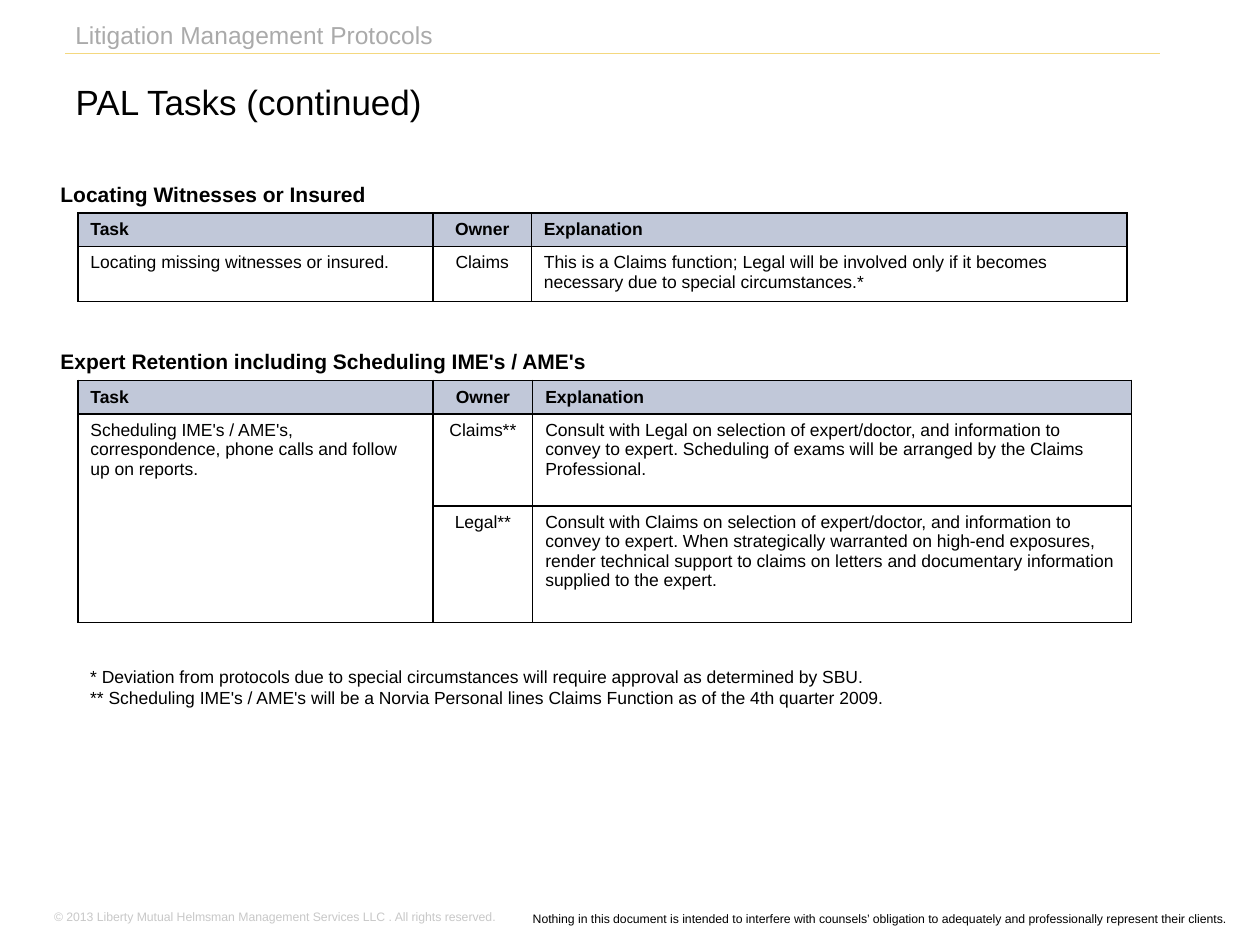
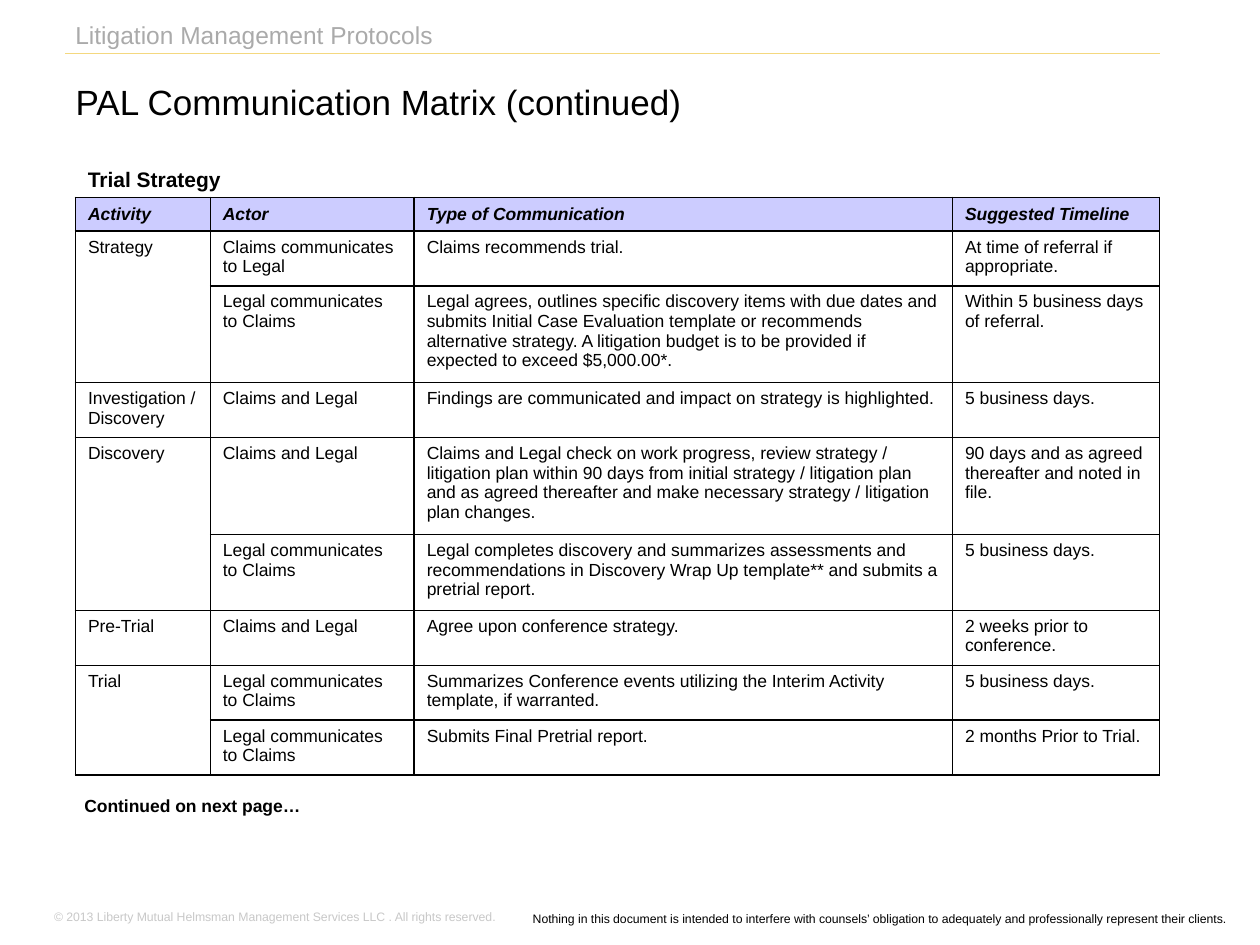
from lxml import etree
from pptx import Presentation
from pptx.dml.color import RGBColor
from pptx.enum import shapes, text
from pptx.oxml import ns
from pptx.util import Cm, Pt

BLACK = RGBColor(0x00, 0x00, 0x00)
HEADER_GRAY = RGBColor(0xAA, 0xAA, 0xAA)
COPYRIGHT_GRAY = RGBColor(0xC8, 0xC8, 0xC8)
GOLD = RGBColor(0xF4, 0xD8, 0x7F)
TASK_BLUE = RGBColor(0xC1, 0xC8, 0xD9)
MATRIX_BLUE = RGBColor(0xCC, 0xCC, 0xFF)
FONT = "Arial"

TITLE_BOX = (1.27, 1.4, 22.86, 1.19)
RULE = (1.32, 1.08, 23.39, 1.08)
SHARED_TEXTS = [
    ("Litigation Management Protocols", (1.27, 0.04, 18.21, 1.3),
     dict(size=14, color=HEADER_GRAY, anchor=text.MSO_ANCHOR.MIDDLE)),
    ("Nothing in this document is intended to interfere with counsels’ obligation to "
     "adequately and professionally represent their clients.", (7.62, 18.24, 17.35, 0.56),
     dict(size=7, align=text.PP_ALIGN.RIGHT)),
    ("© 2013 Liberty Mutual Helmsman Management Services LLC . All rights reserved.",
     (0.84, 18.21, 17.63, 0.56), dict(size=7, color=COPYRIGHT_GRAY)),
]

HEADING = dict(size=12, bold=True, wrap=False, anchor=text.MSO_ANCHOR.MIDDLE)
NOTES = dict(size=10, wrap=False, anchor=text.MSO_ANCHOR.MIDDLE)
CONTINUED = dict(size=10, bold=True)

TASK_STYLE = dict(header_fill=TASK_BLUE, centered=(1,), thin=(1, 2))
MATRIX_STYLE = dict(header_fill=MATRIX_BLUE, italic=True, thin=(1,))
TASK_HEADER = ("Task", "Owner", "Explanation")

SLIDES = [
    dict(
        title="PAL Tasks (continued)",
        texts=[
            ("Locating Witnesses or Insured", (0.97, 3.53, 6.81, 0.76), HEADING),
            ("Expert Retention including Scheduling IME's / AME's",
             (0.97, 6.91, 11.28, 0.76), HEADING),
            ("* Deviation from protocols due to special circumstances will require approval "
             "as determined by SBU.\n"
             "** Scheduling IME's / AME's will be a Norvia Personal lines Claims Function "
             "as of the 4th quarter 2009.", (1.57, 13.31, 16.64, 1.09), NOTES),
        ],
        tables=[
            dict(at=(1.57, 4.29), cols=(7.16, 1.98, 12.01), heights=(0.67, 1.11), rows=[
                TASK_HEADER,
                ("Locating missing witnesses or insured.", "Claims",
                 "This is a Claims function; Legal will be involved only if it becomes "
                 "necessary due to special circumstances.*"),
            ], style=TASK_STYLE),
            dict(at=(1.57, 7.67), cols=(7.16, 2.01, 12.07), heights=(0.67, 1.85, 2.35), rows=[
                TASK_HEADER,
                ("Scheduling IME's / AME's, correspondence, phone calls and follow up on "
                 "reports.", "Claims**",
                 "Consult with Legal on selection of expert/doctor, and information to convey "
                 "to expert. Scheduling of exams will be arranged by the Claims Professional."),
                (None, "Legal**",
                 "Consult with Claims on selection of expert/doctor, and information to convey "
                 "to expert. When strategically warranted on high-end exposures, render "
                 "technical support to claims on letters and documentary information supplied "
                 "to the expert."),
            ], style=TASK_STYLE),
        ],
    ),
    dict(
        title="PAL Communication Matrix (continued)",
        texts=[
            ("Trial Strategy", (1.52, 3.23, 3.23, 0.76), HEADING),
            ("Continued on next page…", (1.45, 15.9, 7.39, 0.69), CONTINUED),
        ],
        tables=[
            dict(at=(1.52, 3.98), cols=(2.72, 4.11, 10.85, 4.17),
                 heights=(0.68, 1.1, 1.95, 1.11, 1.95, 1.52, 1.11, 1.1, 1.11), rows=[
                ("Activity", "Actor", "Type of Communication", "Suggested Timeline"),
                ("Strategy", "Claims communicates to Legal", "Claims recommends trial.",
                 "At time of referral if appropriate."),
                (None, "Legal communicates to Claims",
                 "Legal agrees, outlines specific discovery items with due dates and submits "
                 "Initial Case Evaluation template or recommends alternative strategy. A "
                 "litigation budget is to be provided if expected to exceed $5,000.00*.",
                 "Within 5 business days of referral."),
                ("Investigation / Discovery", "Claims and Legal",
                 "Findings are communicated and impact on strategy is highlighted.",
                 "5 business days."),
                ("Discovery", "Claims and Legal",
                 "Claims and Legal check on work progress, review strategy / litigation plan "
                 "within 90 days from initial strategy / litigation plan and as agreed "
                 "thereafter and make necessary strategy / litigation plan changes.",
                 "90 days and as agreed thereafter and noted in file."),
                (None, "Legal communicates to Claims",
                 "Legal completes discovery and summarizes assessments and recommendations in "
                 "Discovery Wrap Up template** and submits a pretrial report.",
                 "5 business days."),
                ("Pre-Trial", "Claims and Legal", "Agree upon conference strategy.",
                 "2 weeks prior to conference."),
                ("Trial", "Legal communicates to Claims",
                 "Summarizes Conference events utilizing the Interim Activity template, if "
                 "warranted.", "5 business days."),
                (None, "Legal communicates to Claims", "Submits Final Pretrial report.",
                 "2 months Prior to Trial."),
            ], style=MATRIX_STYLE),
        ],
    ),
]


def write(tf, words, size=10, color=BLACK, bold=False, italic=False,
          align=text.PP_ALIGN.LEFT, anchor=text.MSO_ANCHOR.TOP, wrap=True):
    tf.word_wrap = wrap
    tf.vertical_anchor = anchor
    for i, line in enumerate(words.split("\n")):
        p = tf.paragraphs[0] if i == 0 else tf.add_paragraph()
        p.alignment = align
        r = p.add_run()
        r.text = line
        r.font.name, r.font.size = FONT, Pt(size)
        r.font.bold, r.font.italic = bold, italic
        r.font.color.rgb = color


def add_text(slide, words, box, **fmt):
    sp = slide.shapes.add_textbox(*map(Cm, box))
    write(sp.text_frame, words, **fmt)
    return sp


def add_border(cell, side, width):
    tc_pr = cell._tc.get_or_add_tcPr()
    ln = etree.SubElement(tc_pr, ns.qn(f"a:ln{side}"), w=str(Pt(width)))
    fill = etree.SubElement(ln, ns.qn("a:solidFill"))
    etree.SubElement(fill, ns.qn("a:srgbClr"), val=str(BLACK))


def add_table(slide, at, cols, heights, rows, style):
    frame = slide.shapes.add_table(len(rows), len(cols), *map(Cm, (*at, sum(cols), sum(heights))))
    table = frame.table
    table.first_row = table.horz_banding = False
    for column, width in zip(table.columns, cols):
        column.width = Cm(width)
    for row, height in zip(table.rows, heights):
        row.height = Cm(height)
    for i, row in enumerate(rows):
        header = i == 0
        for j, words in enumerate(row):
            cell = table.cell(i, j)
            add_border(cell, "L", 0.75 if j in style["thin"] else 1)
            add_border(cell, "R", 0.75 if j + 1 in style["thin"] else 1)
            add_border(cell, "T", 1)
            add_border(cell, "B", 1)
            if header:
                cell.fill.solid()
                cell.fill.fore_color.rgb = style["header_fill"]
            else:
                cell.fill.background()
            if words is None:
                table.cell(i - 1, j).merge(cell)
                continue
            centered = j in style.get("centered", ())
            write(cell.text_frame, words, bold=header,
                  italic=header and style.get("italic", False),
                  align=text.PP_ALIGN.CENTER if centered else text.PP_ALIGN.LEFT)
            cell.vertical_anchor = text.MSO_ANCHOR.MIDDLE if header else text.MSO_ANCHOR.TOP


def share_on_layout(layout, slide):
    title = layout.placeholders[0]
    title.left, title.top, title.width, title.height = map(Cm, TITLE_BOX)
    rule = slide.shapes.add_connector(shapes.MSO_CONNECTOR.STRAIGHT, *map(Cm, RULE))
    rule.line.color.rgb = GOLD
    rule.line.width = Pt(0.75)
    etree.SubElement(rule._element.spPr, ns.qn("a:effectLst"))
    shared = [rule] + [add_text(slide, words, box, **fmt) for words, box, fmt in SHARED_TEXTS]
    for sp in shared:
        layout.shapes._spTree.append(sp._element)


def main():
    prs = Presentation()
    prs.slide_width, prs.slide_height = Cm(25.4), Cm(19.05)
    layout = prs.slide_layouts[5]
    for n, content in enumerate(SLIDES):
        slide = prs.slides.add_slide(layout)
        if n == 0:
            share_on_layout(layout, slide)
        tf = slide.shapes.title.text_frame
        write(tf, content["title"], size=20, anchor=text.MSO_ANCHOR.BOTTOM)
        tf.auto_size = text.MSO_AUTO_SIZE.NONE
        for words, box, fmt in content["texts"]:
            add_text(slide, words, box, **fmt)
        for spec_table in content["tables"]:
            add_table(slide, **spec_table)
    prs.save("out.pptx")


if __name__ == "__main__":
    main()
